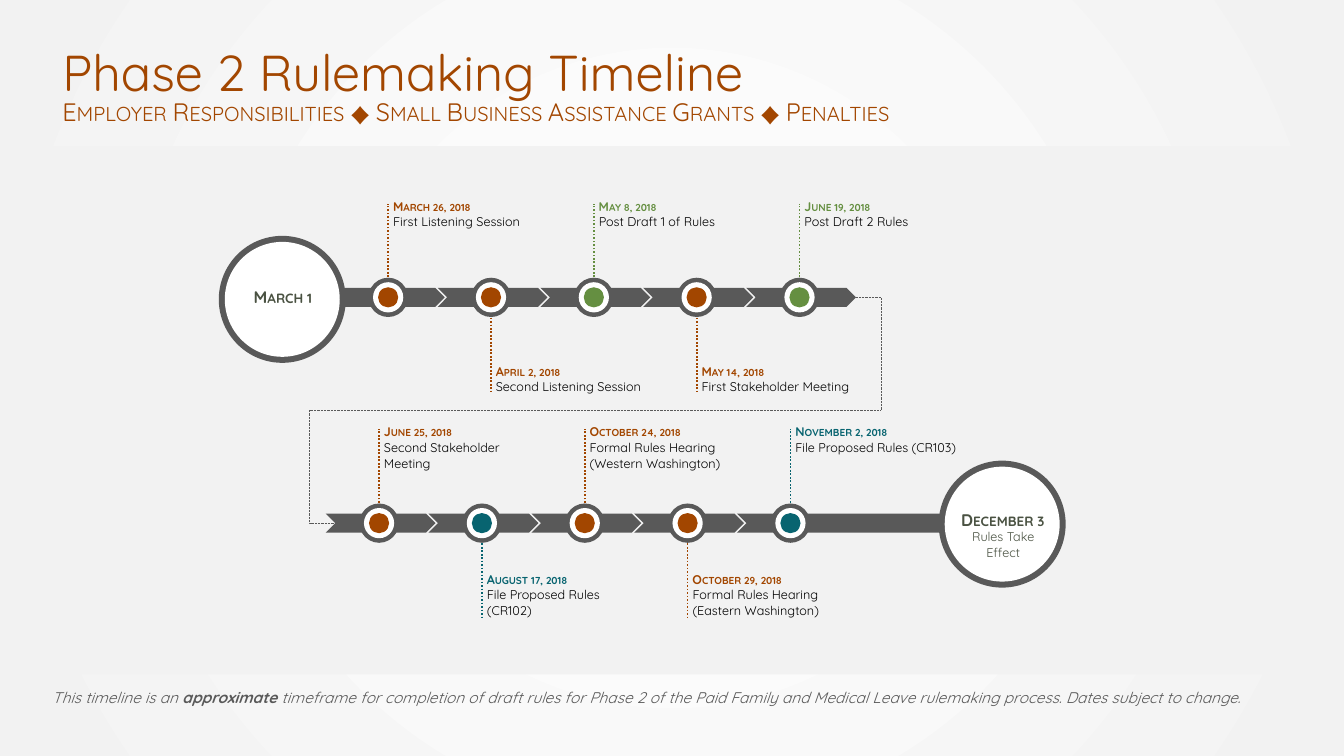
from lxml.etree import SubElement
from pptx import Presentation
from pptx.dml.color import RGBColor
from pptx.enum.dml import MSO_LINE
from pptx.enum.shapes import MSO_CONNECTOR, MSO_SHAPE
from pptx.enum.text import PP_ALIGN
from pptx.oxml.ns import qn
from pptx.util import Inches, Pt

GRAY, WHITE, PALE = "595959", "FFFFFF", "F2F2F2"
RUST, GREEN, TEAL, OLIVE, BLACK = "A24600", "658F41", "086470", "4A5242", "000000"
COLUMN = 1.02
BAR = 0.19

deck = Presentation()
deck.slide_width, deck.slide_height = Inches(13.33), Inches(7.5)
page = deck.slides.add_slide(deck.slide_layouts[6])


def draw(kind, left, top, width, height, color):
    shape = page.shapes.add_shape(kind, Inches(left), Inches(top), Inches(width), Inches(height))
    shape.shadow.inherit = False
    shape.fill.solid()
    shape.fill.fore_color.rgb = RGBColor.from_string(color)
    shape.line.fill.background()


def write(pieces, left, top, width, height, size, color, heading=False, align=PP_ALIGN.LEFT, spacing=1.07):
    box = page.shapes.add_textbox(Inches(left), Inches(top), Inches(width), Inches(height))
    box.text_frame.word_wrap = True
    para = box.text_frame.paragraphs[0]
    para.text = pieces[0]
    for piece in pieces[1:]:
        para.add_run().text = piece
    para.alignment, para.line_spacing = align, spacing
    for span in para.runs:
        span.font.name, span.font.size, span.font.bold = "Quicksand", Pt(size), heading
        span.font.color.rgb = RGBColor.from_string(color)
        if heading:
            span.font._element.set("cap", "small")
    return para


page.background.fill.gradient()
stops = page.background.fill.gradient_stops
for stop, position, color in zip(stops, (0, 1), (WHITE, PALE)):
    stop.position = position
    stop.color.rgb = RGBColor.from_string(color)
gradient = page.element.find(".//" + qn("a:gradFill"))
gradient.remove(gradient.find(qn("a:lin")))
circle = SubElement(gradient, qn("a:path"))
circle.set("path", "circle")
center = SubElement(circle, qn("a:fillToRect"))
for side in "ltrb":
    center.set(side, "50000")

draw(MSO_SHAPE.RECTANGLE, 0, 1.45, 13.33, 5.24, PALE)
write(["Phase 2 Rulemaking Timeline"], 0.52, 0.32, 7.97, 1.06, 36, RUST)

timelines = [
    (3.85, 2.95, 0.62, 1.91, 3.55, [
        ("March 26, 2018", "First Listening Session", RUST),
        ("April 2, 2018", "Second Listening Session", RUST),
        ("May 8, 2018", "Post Draft 1 of Rules", GREEN),
        ("May 14, 2018", "First Stakeholder Meeting", RUST),
        ("June 19, 2018", "Post Draft 2 Rules", GREEN)]),
    (3.76, 5.19, 1.69, 4.15, 5.61, [
        ("June 25, 2018", "Second Stakeholder Meeting", RUST),
        ("August 17, 2018", "File Proposed Rules (CR102)", TEAL),
        ("October 24, 2018", "Formal Rules Hearing (Western Washington)", RUST),
        ("October 29, 2018", "Formal Rules Hearing (Eastern Washington)", RUST),
        ("November 2, 2018", "File Proposed Rules (CR103)", TEAL)]),
]
lines = []
for start, middle, last_bar, upper, lower, milestones in timelines:
    for index, (date, event, color) in enumerate(milestones):
        x = start + index * COLUMN
        below = index % 2
        last = index == len(milestones) - 1
        side = 1 if below else -1
        label_top = lower if below else upper
        draw(MSO_SHAPE.CHEVRON, x - 0.06, middle - BAR / 2, last_bar if last else 0.62, BAR, GRAY)
        draw(MSO_SHAPE.CHEVRON, x - 0.53, middle - BAR / 2, 0.53, BAR, GRAY)
        for size, shade in ((0.39, GRAY), (0.3, WHITE), (0.2, color)):
            draw(MSO_SHAPE.OVAL, x - size / 2, middle - size / 2, size, size, shade)
        lines.append((MSO_CONNECTOR.STRAIGHT, x, middle + side * 0.2, x, middle + side * 0.93, color, 1.25))
        write([date], x - 0.05, label_top, 1.57, 0.33, 9, color, heading=True)
        write([event], x - 0.05, label_top + 0.15, 1.97 if last else 1.75, 0.43, 9, BLACK)

lines.append((MSO_CONNECTOR.ELBOW, 8.49, 2.95, 3.32, 5.19, GRAY, 0.5))
for kind, x1, y1, x2, y2, color, weight in lines:
    connector = page.shapes.add_connector(kind, Inches(x1), Inches(y1), Inches(x2), Inches(y2))
    connector.line.color.rgb = RGBColor.from_string(color)
    connector.line.width = Pt(weight)
    connector.line.dash_style = MSO_LINE.ROUND_DOT
    SubElement(connector._element.spPr, qn("a:effectLst"))
    if kind == MSO_CONNECTOR.ELBOW:
        geometry = connector._element.spPr.find(qn("a:prstGeom"))
        geometry.set("prst", "bentConnector5")
        guides = geometry.find(qn("a:avLst"))
        for name, value in (("adj1", -4800), ("adj2", 50000), ("adj3", 104800)):
            SubElement(guides, qn("a:gd"), name=name, fmla=f"val {value}")

for x, y, date, date_top in ((2.8, 2.97, "March 1", 2.78), (9.94, 5.2, "December 3", 4.99)):
    for size, shade in ((1.26, GRAY), (1.14, WHITE)):
        draw(MSO_SHAPE.OVAL, x - size / 2, y - size / 2, size, size, shade)
    write([date], x - 0.52, date_top, 1.05, 0.33, 12, OLIVE, heading=True, align=PP_ALIGN.CENTER)
write(["Rules Take Effect"], 9.36, 5.19, 1.18, 0.74, 9, OLIVE, align=PP_ALIGN.CENTER)

note = write(["This timeline is an ", "approximate",
              " timeframe for completion of draft rules for Phase 2 of the Paid Family and Medical Leave "
              "rulemaking process. Dates subject to change."], 0.42, 6.78, 12.67, 0.29, 11, GRAY, spacing=1.0)
for span in note.runs:
    span.font.italic = True
note.runs[1].font.bold = True

subtitle = write(["Employer Responsibilities ♦ Small Business Assistance Grants ♦ Penalties"],
                 0.52, 0.91, 8.85, 0.71, 18, RUST, heading=True, spacing=1.0)
subtitle.runs[0].font.bold = False

deck.save("out.pptx")
